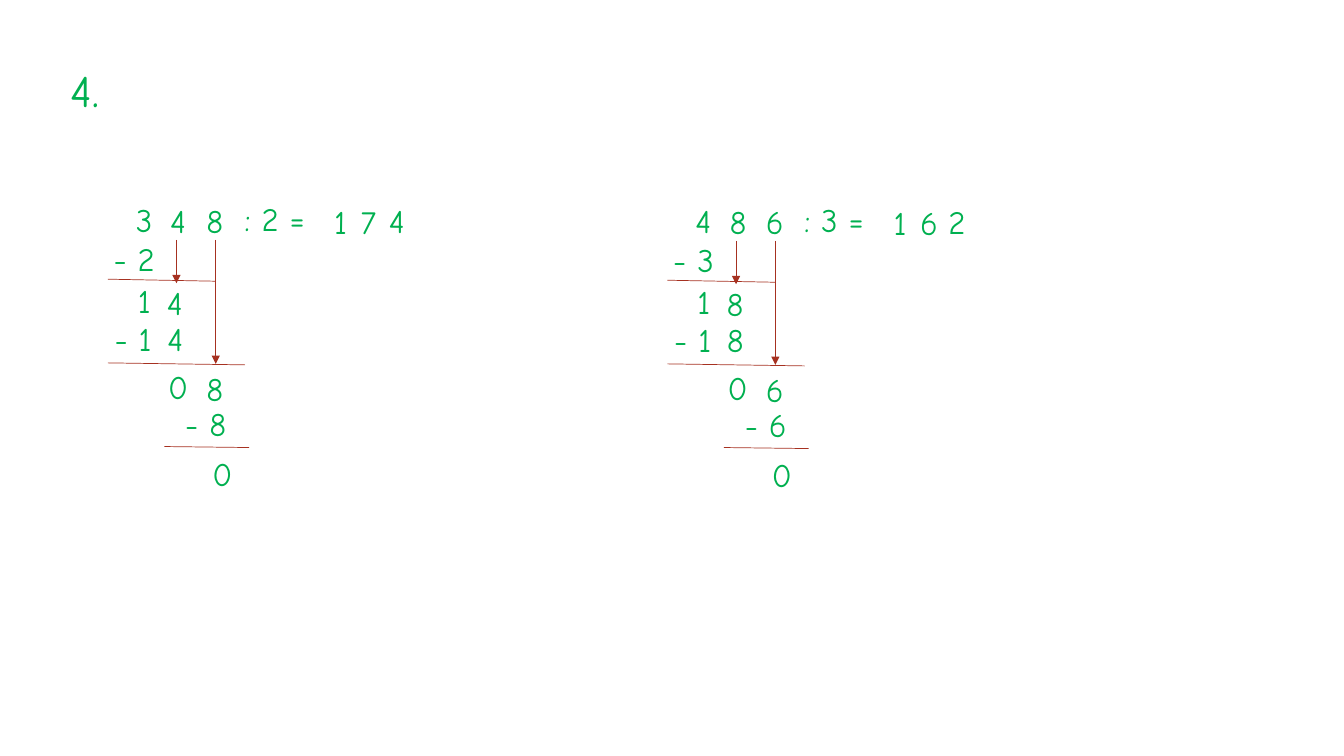
from lxml import etree
from pptx import Presentation
from pptx.dml.color import RGBColor
from pptx.enum.shapes import MSO_CONNECTOR
from pptx.enum.text import MSO_ANCHOR, MSO_AUTO_SIZE, PP_ALIGN
from pptx.oxml.ns import qn
from pptx.util import Inches, Pt

STRAIGHT = MSO_CONNECTOR.STRAIGHT
BOTTOM = MSO_ANCHOR.BOTTOM
NO_FIT = MSO_AUTO_SIZE.NONE
LEFT, CENTER = PP_ALIGN.LEFT, PP_ALIGN.CENTER

FONT = "Comic Neue"
GREEN = "00B050"
BROWN = "A63121"
DIGIT_SIZE = 23.4
GAP_SIZE = 9.8
ROW_HEIGHT = 0.54

# Shift of each division: right, down
DIVISIONS = [
    ((0, 0), {"dividend": "348", "divisor": "2", "quotient": "174",
              "products": ("2", "14", "8"), "remainders": ("14", "08", "0")}),
    ((5.55, 0.01), {"dividend": "486", "divisor": "3", "quotient": "162",
                    "products": ("3", "18", "6"), "remainders": ("18", "06", "0")}),
]

# Left, top and width of the digits, in reading order
DIVIDEND_PLACES = [(1.14, 1.89, 0.63), (1.48, 1.9, 0.63), (1.84, 1.9, 0.63)]
QUOTIENT_PLACES = [(3.01, 1.91, 0.63), (3.37, 1.91, 0.54), (3.65, 1.9, 0.54)]
REMAINDER_PLACES = [
    [(1.16, 2.69, 0.98), (1.45, 2.71, 0.66)],
    [(1.46, 3.54, 0.98), (1.84, 3.56, 0.66)],
    [(1.9, 4.41, 0.98)],
]
PRODUCT_PLACES = [(0.92, 2.27, 0.98), (0.93, 3.07, 1.62), (1.63, 3.91, 0.98)]

# Start and end of each line
RULES = [(1.07, 2.77, 2.14, 2.79), (1.07, 3.6, 2.43, 3.62), (1.63, 4.43, 2.47, 4.44)]
ARROWS = [(1.75, 2.38, 1.75, 2.81), (2.14, 2.38, 2.14, 3.61)]


def color(value):
    return RGBColor.from_string(value)


def write(shape, spans, align=LEFT):
    """Fill a shape with one line of (text, size) spans."""
    frame = shape.text_frame
    frame_format = {"word_wrap": True, "auto_size": NO_FIT, "vertical_anchor": BOTTOM}
    for name, value in frame_format.items():
        setattr(frame, name, value)
    para = frame.paragraphs[0]
    para.alignment = align
    para.line_spacing = 0.9
    for text, size in spans:
        span = para.add_run()
        span.text = text
        for name, value in {"name": FONT, "size": Pt(size), "bold": False}.items():
            setattr(span.font, name, value)
        span.font.color.rgb = color(GREEN)


def add_text(slide, place, shift, spans, align=LEFT):
    left, top, width = place
    box = slide.shapes.add_textbox(Inches(left + shift[0]), Inches(top + shift[1]),
                                   Inches(width), Inches(ROW_HEIGHT))
    write(box, spans, align)


def add_digit(slide, place, shift, digit, align=LEFT):
    add_text(slide, place, shift, [(f" {digit}", DIGIT_SIZE)], align)


def add_line(slide, points, shift, arrow=False):
    x1, y1, x2, y2 = points
    right, down = shift
    line = slide.shapes.add_connector(STRAIGHT, Inches(x1 + right), Inches(y1 + down),
                                      Inches(x2 + right), Inches(y2 + down))
    line.line.color.rgb = color(BROWN)
    line.line.width = Pt(0.5)
    if arrow:
        etree.SubElement(line.line._get_or_add_ln(), qn("a:tailEnd"), type="triangle")
    etree.SubElement(line._element.spPr, qn("a:effectLst"))


def add_title(slide, text):
    title = slide.shapes.title
    place = {"left": 0.6, "top": 0.74, "width": 1.02, "height": 0.47}
    for name, value in place.items():
        setattr(title, name, Inches(value))
    write(title, [(text, 32)])


def product_spans(product):
    """Put a small gap between the digits of a two-digit product."""
    if len(product) == 1:
        return [(f" - {product}", DIGIT_SIZE)]
    first, second = product
    return [(f" - {first} ", DIGIT_SIZE), (" ", GAP_SIZE), (second, DIGIT_SIZE)]


def add_division(slide, shift, sums):
    for place, digit in zip(DIVIDEND_PLACES, sums["dividend"]):
        add_digit(slide, place, shift, digit)
    add_text(slide, (2.22, 1.88, 1.11), shift, [(f" : {sums['divisor']} =", DIGIT_SIZE)])
    for index, (place, digit) in enumerate(zip(QUOTIENT_PLACES, sums["quotient"])):
        add_digit(slide, place, shift, digit, LEFT if index else CENTER)
    for place, product in zip(PRODUCT_PLACES, sums["products"]):
        add_text(slide, place, shift, product_spans(product))
    for places, remainder in zip(REMAINDER_PLACES, sums["remainders"]):
        for place, digit in zip(places, remainder):
            add_digit(slide, place, shift, digit)
    for points in RULES:
        add_line(slide, points, shift)
    for points in ARROWS:
        add_line(slide, points, shift, arrow=True)


def main():
    deck = Presentation()
    deck.slide_width = Inches(13.33)
    deck.slide_height = Inches(7.5)
    page = deck.slides.add_slide(deck.slide_layouts[5])
    add_title(page, "4.")
    for shift, sums in DIVISIONS:
        add_division(page, shift, sums)
    deck.save("out.pptx")


if __name__ == "__main__":
    main()
